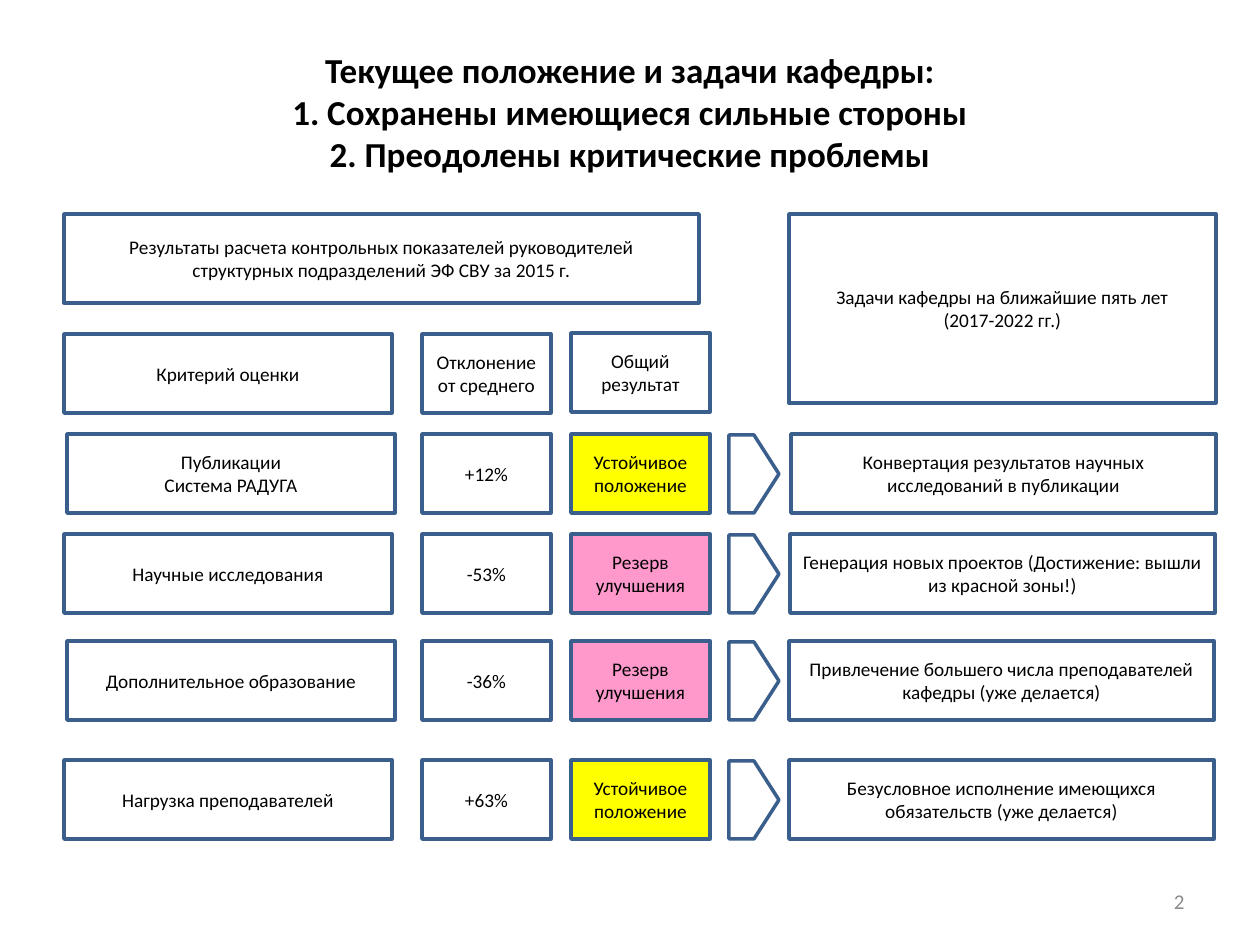
from pptx import Presentation
from pptx import util as u
from pptx.dml.color import RGBColor
from pptx.enum import shapes, text

PX = 914400 / 126
WHITE = RGBColor(0xFF, 0xFF, 0xFF)
BLACK = RGBColor(0, 0, 0)
BLUE = RGBColor(0x3A, 0x5F, 0x8C)
YELLOW = RGBColor(0xFF, 0xFF, 0x00)
PINK = RGBColor(0xFF, 0x99, 0xCC)
GREY = RGBColor(0x8C, 0x8C, 0x8C)

TITLE = ["Текущее положение и задачи кафедры:",
         "1. Сохранены имеющиеся сильные стороны",
         "2. Преодолены критические проблемы"]
STABLE = ("Устойчивое положение", YELLOW)
RESERVE = ("Резерв улучшения", PINK)

HEADERS = [
    ((64, 214, 635, 89), ["Результаты расчета контрольных показателей руководителей "
                          "структурных подразделений ЭФ СВУ за 2015 г."]),
    ((64, 334, 328, 79), ["Критерий оценки"]),
    ((422, 334, 129, 79), ["Отклонение от среднего"]),
    ((571, 333, 139, 79), ["Общий результат"]),
    ((789, 214, 427, 189), ["Задачи кафедры на ближайшие пять лет", "(2017-2022 гг.)"]),
]
# top, criterion left, criterion, deviation, result, task left, task
ROWS = [
    (434, 67, ["Публикации", "Система РАДУГА"], "+12%", STABLE, 791,
     "Конвертация результатов научных исследований в публикации"),
    (534, 64, ["Научные исследования"], "-53%", RESERVE, 790,
     "Генерация новых проектов (Достижение: вышли из красной зоны!)"),
    (641, 67, ["Дополнительное образование"], "-36%", RESERVE, 789,
     "Привлечение большего числа преподавателей кафедры (уже делается)"),
    (760, 64, ["Нагрузка преподавателей"], "+63%", STABLE, 789,
     "Безусловное исполнение имеющихся обязательств (уже делается)"),
]
ROW_H = 79


def px(*values):
    return [u.Emu(round(v * PX)) for v in values]


def write(sp, lines, size, color=BLACK, bold=False, align=text.PP_ALIGN.CENTER):
    tf = sp.text_frame
    tf.word_wrap = True
    tf.auto_size = text.MSO_AUTO_SIZE.NONE
    tf.vertical_anchor = text.MSO_ANCHOR.MIDDLE
    p = tf.paragraphs[0]
    p.alignment = align
    for i, line in enumerate(lines):
        if i:
            p.add_line_break()
        r = p.add_run()
        r.text = line
        r.font.name = "Calibri"
        r.font.size = u.Pt(size)
        r.font.bold = bold
        r.font.color.rgb = color


def box(s, at, lines=(), fill=WHITE, kind=shapes.MSO_SHAPE.RECTANGLE):
    sp = s.shapes.add_shape(kind, *px(*at))
    sp.shadow.inherit = False
    sp.fill.solid()
    sp.fill.fore_color.rgb = fill
    sp.line.color.rgb = BLUE
    sp.line.width = u.Pt(2)
    write(sp, lines, 11)


def main():
    prs = Presentation()
    prs.slide_width, prs.slide_height = px(1260, 945)
    s = prs.slides.add_slide(prs.slide_layouts[5])

    title = s.shapes.title
    title.left, title.top, title.width, title.height = px(63, 38, 1134, 147)
    write(title, TITLE, 20, bold=True)

    for at, lines in HEADERS:
        box(s, at, lines)
    for top, left, criterion, deviation, (result, color), task_left, task in ROWS:
        box(s, (left, top, 328, ROW_H), criterion)
        box(s, (422, top, 129, ROW_H), [deviation])
        box(s, (571, top, 139, ROW_H), [result], color)
        box(s, (729, top + 1, 50, ROW_H - 1), kind=shapes.MSO_SHAPE.PENTAGON)
        box(s, (task_left, top, 425, ROW_H), [task])

    number = s.shapes.add_textbox(*px(903, 876, 294, 50))
    write(number, ["2"], 12, GREY, align=text.PP_ALIGN.RIGHT)
    prs.save("out.pptx")


if __name__ == "__main__":
    main()
